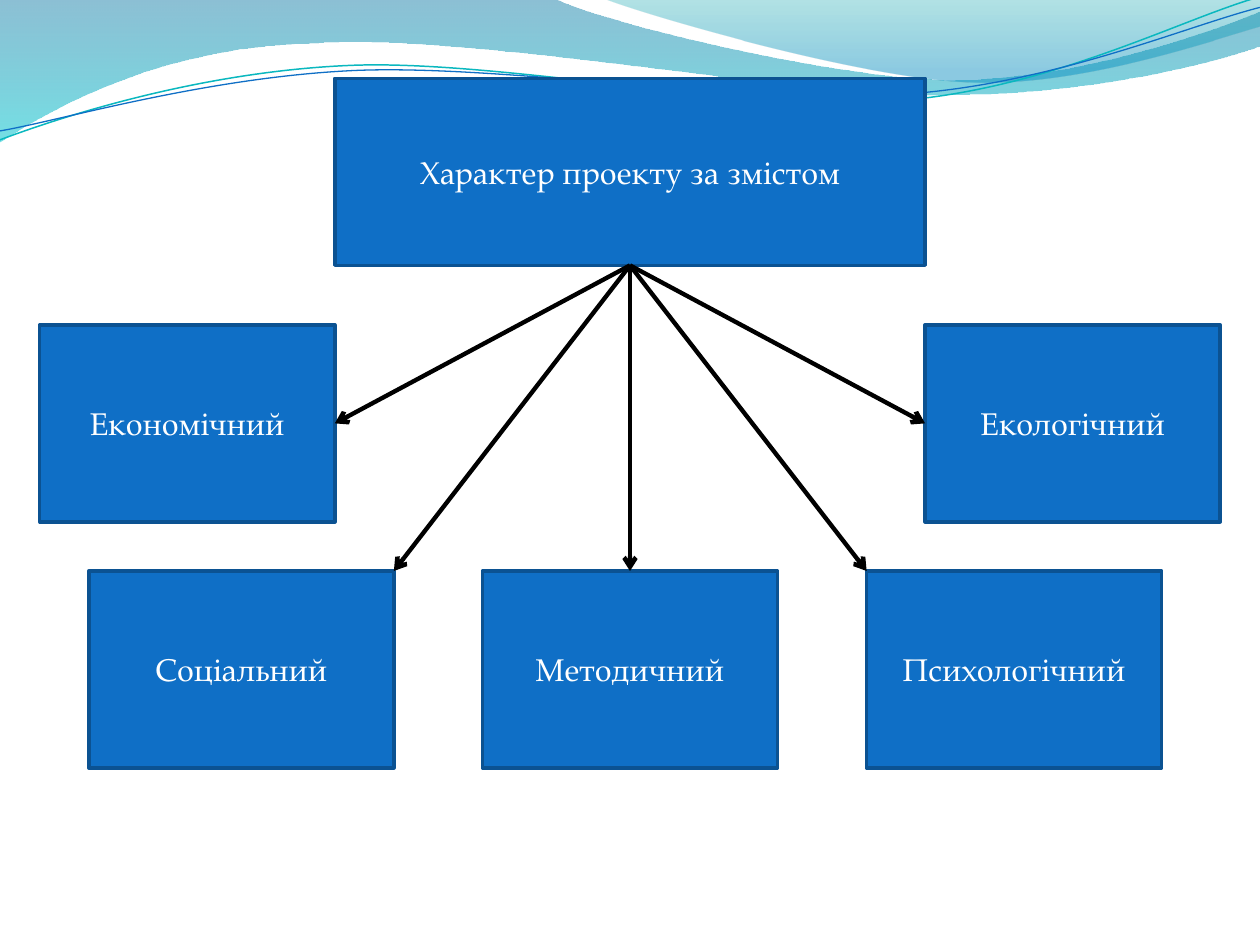
from dataclasses import dataclass

from lxml.etree import SubElement
from pptx import Presentation
from pptx.dml.color import RGBColor
from pptx.enum.shapes import MSO_CONNECTOR, MSO_SHAPE
from pptx.enum.text import MSO_ANCHOR, PP_ALIGN
from pptx.oxml.ns import qn
from pptx.util import Cm, Pt


@dataclass(frozen=True)
class Theme:
    box: RGBColor = RGBColor(0x0F, 0x6F, 0xC6)
    border: RGBColor = RGBColor(0x0B, 0x52, 0x92)
    text: RGBColor = RGBColor(0xFF, 0xFF, 0xFF)
    arrow: RGBColor = RGBColor(0, 0, 0)
    teal: RGBColor = RGBColor(0x0A, 0xB8, 0xBF)
    # Gradient stops: position, colour, opacity in percent
    wide_wave: tuple = ((0, "0074A1", 45), (1, "00C6CF", 55))
    corner_wave: tuple = ((0, "00A1A9", 30), (0.8, "008BBF", 45))
    font: str = "TeX Gyre Pagella"
    size: Pt = Pt(18)
    border_width: Pt = Pt(2)
    arrow_width: Pt = Pt(2.5)


THEME = Theme()
SLIDE_W, SLIDE_H = 25.4, 19.05
CARD_W, CARD_H = 5.95, 3.97
UPPER_Y, LOWER_Y = 6.55, 11.51
MARGIN = 0.8

# Paths in cm: a start point, then segments of one point (line) or three (curve)
WIDE_WAVE = (0, 0), [
    [(11.18, -0.03)],
    [(12.09, 0.43), (16.87, 1.6), (19.25, 1.6)],
    [(21.67, 1.6), (24.33, 0.66), (25.4, 0.23)],
    [(25.43, 0.91)],
    [(24.97, 1.12), (22.1, 1.93), (18.95, 1.91)],
    [(15.8, 1.91), (9.7, 0.71), (6.53, 0.86)],
    [(3.28, 0.91), (1.17, 2.11), (-0.03, 2.87)],
    [(0, 0)],
]
CORNER_WAVE = (12.17, -0.03), [
    [(12.93, 0.28), (17.32, 1.57), (19.53, 1.65)],
    [(21.74, 1.75), (24.41, 0.81), (25.4, 0.53)],
    [(25.4, 0)],
    [(12.17, -0.03)],
]
TEAL_LINE = (0, 2.82), [
    [(1.22, 2.36), (4.01, 1.45), (7.04, 1.32)],
    [(10.03, 1.19), (15.06, 2.26), (18.11, 2.03)],
    [(21.16, 1.8), (23.83, 0.38), (25.35, -0.05)],
]
BLUE_LINE = (0, 2.64), [
    [(1.19, 2.44), (4.17, 1.55), (7.19, 1.42)],
    [(10.24, 1.3), (15.16, 2.13), (18.21, 1.9)],
    [(21.23, 1.7), (23.9, 0.53), (25.4, 0.15)],
]


def add_outline(slide, outline, close):
    """Build a freeform, turning each three-point segment into a Bezier curve."""
    (x0, y0), segments = outline
    builder = slide.shapes.build_freeform(Cm(x0), Cm(y0))
    points = [(Cm(x), Cm(y)) for segment in segments for x, y in segment]
    builder.add_line_segments(points, close=close)
    s = builder.convert_to_shape()
    s.shadow.inherit = False
    lines = iter(list(s._element.spPr.iter(qn("a:lnTo"))))
    for segment in segments:
        steps = [next(lines) for _ in segment]
        if len(steps) == 3:
            curve = SubElement(steps[0].getparent(), qn("a:cubicBezTo"))
            steps[0].addprevious(curve)
            for step in steps:
                curve.append(step[0])
                step.getparent().remove(step)
    return s


def add_wave(slide, outline, stops):
    s = add_outline(slide, outline, close=True)
    s.line.fill.background()
    s.fill.gradient()
    s.fill.gradient_angle = 270
    for stop, (position, color, _) in zip(s.fill.gradient_stops, stops):
        stop.position = position
        stop.color.rgb = RGBColor.from_string(color)
    colors = s._element.spPr.iter(qn("a:srgbClr"))
    for color, (_, _, opacity) in zip(colors, stops):
        SubElement(color, qn("a:alpha"), val=str(opacity * 1000))


def add_wave_line(slide, outline, color, width):
    s = add_outline(slide, outline, close=False)
    s.fill.background()
    s.line.color.rgb = color
    s.line.width = width


def add_box(slide, text, x, y, w=CARD_W, h=CARD_H):
    s = slide.shapes.add_shape(MSO_SHAPE.RECTANGLE, Cm(x), Cm(y), Cm(w), Cm(h))
    s.shadow.inherit = False
    s.fill.solid()
    s.fill.fore_color.rgb = THEME.box
    s.line.color.rgb = THEME.border
    s.line.width = THEME.border_width
    tf = s.text_frame
    tf.word_wrap = True
    tf.vertical_anchor = MSO_ANCHOR.MIDDLE
    p = tf.paragraphs[0]
    p.alignment = PP_ALIGN.CENTER
    r = p.add_run()
    r.text = text
    r.font.name = THEME.font
    r.font.size = THEME.size
    r.font.color.rgb = THEME.text
    return s


def add_arrow(slide, source, target, site=None, corner=None):
    """Join the bottom of source to a side of target, or end at a corner point."""
    x, y = corner or (target.left, target.top)
    s = slide.shapes.add_connector(MSO_CONNECTOR.STRAIGHT, 0, 0, x, y)
    s.begin_connect(source, 2)
    if site is not None:
        s.end_connect(target, site)
    s.line.color.rgb = THEME.arrow
    s.line.width = THEME.arrow_width
    SubElement(s.line._get_or_add_ln(), qn("a:tailEnd"), type="arrow")
    SubElement(s._element.spPr, qn("a:effectLst"))


def add_background(slide):
    add_wave(slide, WIDE_WAVE, THEME.wide_wave)
    add_wave(slide, CORNER_WAVE, THEME.corner_wave)
    add_wave_line(slide, TEAL_LINE, THEME.teal, Pt(0.85))
    add_wave_line(slide, BLUE_LINE, THEME.box, Pt(0.75))


def main():
    prs = Presentation()
    prs.slide_width, prs.slide_height = Cm(SLIDE_W), Cm(SLIDE_H)
    slide = prs.slides.add_slide(prs.slide_layouts[6])
    add_background(slide)

    title = add_box(slide, "Характер проекту за змістом", 6.75, 1.58, 11.9, 3.77)
    social = add_box(slide, "Соціальний", 1.79, LOWER_Y, w=6.15)
    method = add_box(slide, "Методичний", (SLIDE_W - CARD_W) / 2, LOWER_Y)
    ecology = add_box(slide, "Екологічний", SLIDE_W - MARGIN - CARD_W, UPPER_Y)
    economy = add_box(slide, "Економічний", MARGIN, UPPER_Y)
    psychology = add_box(slide, "Психологічний", 17.47, LOWER_Y)

    add_arrow(slide, title, economy, site=3)
    add_arrow(slide, title, social, corner=(social.left + social.width, social.top))
    add_arrow(slide, title, method, site=0)
    add_arrow(slide, title, psychology, corner=(psychology.left, psychology.top))
    add_arrow(slide, title, ecology, site=1)

    prs.save("out.pptx")


if __name__ == "__main__":
    main()
